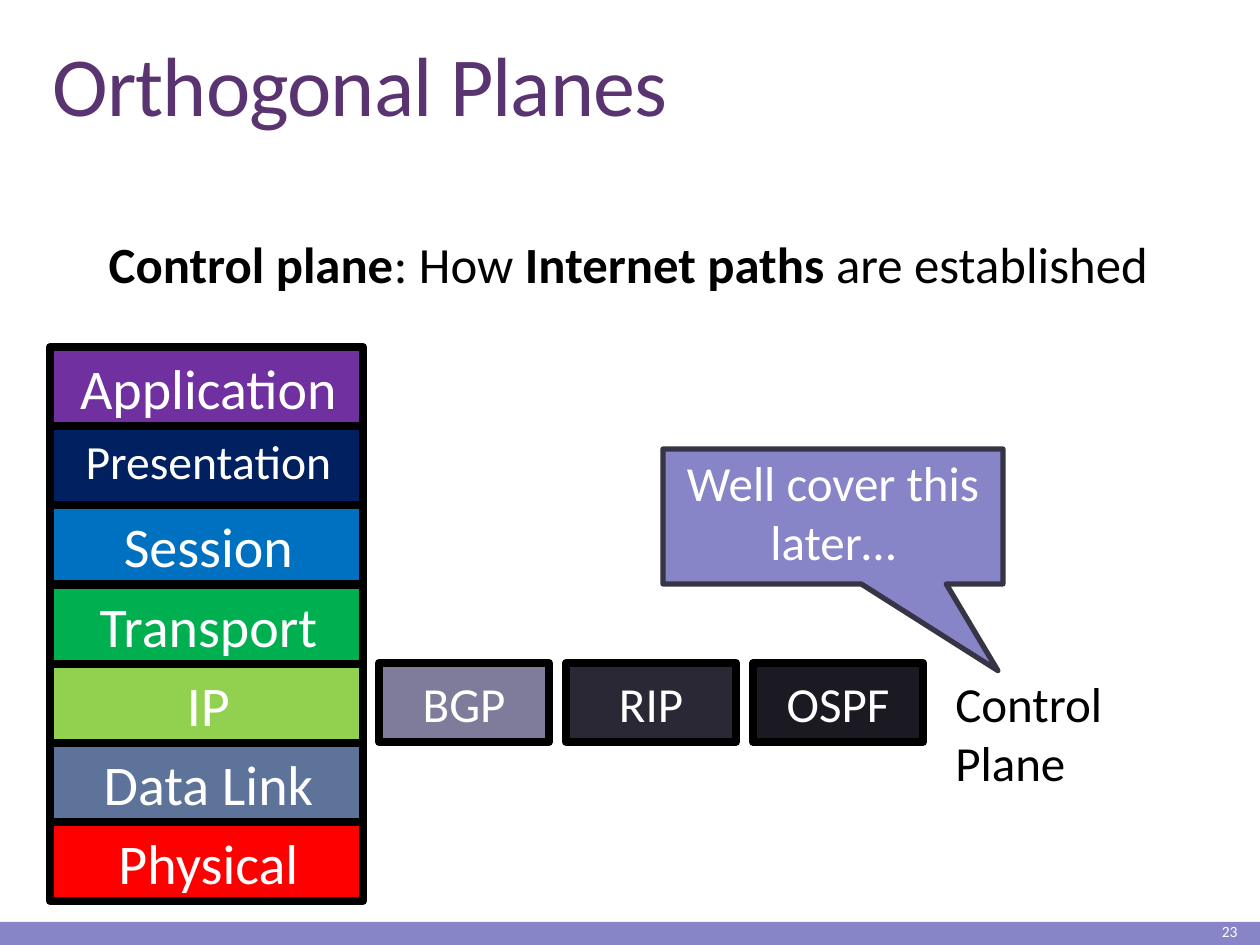
"""Build the slide on the orthogonal layer and control planes."""
import pptx
import pptx.dml.color
import pptx.enum.shapes
import pptx.enum.text
import pptx.util

SHAPE = pptx.enum.shapes.MSO_SHAPE
ALIGN = pptx.enum.text.PP_ALIGN
ANCHOR = pptx.enum.text.MSO_ANCHOR
WHITE, BLACK, LILAC = "FFFFFF", "000000", "8784C7"


def px(*sizes):
    return [round(size * 914400 / 126) for size in sizes]


def color(code):
    return pptx.dml.color.RGBColor.from_string(code)


class Deck:
    font = "Calibri"

    def __init__(self):
        self.prs = pptx.Presentation()
        self.prs.slide_width, self.prs.slide_height = px(1260, 945)
        self.slide = self.prs.slides.add_slide(self.prs.slide_layouts[5])

    def label(self, shape, runs, size, ink=WHITE, align=ALIGN.CENTER,
              anchor=ANCHOR.TOP, before=0):
        frame = shape.text_frame
        frame.word_wrap = True
        frame.auto_size = pptx.enum.text.MSO_AUTO_SIZE.NONE
        frame.vertical_anchor = anchor
        para = frame.paragraphs[0]
        para.alignment = align
        para.space_before = pptx.util.Pt(before)
        para.font.name = self.font
        para.font.size = pptx.util.Pt(size)
        para.font.color.rgb = color(ink)
        for words, bold in runs:
            run = para.add_run()
            run.text = words
            if bold:
                run.font.bold = True
        return para

    def title(self, words, box):
        shape = self.slide.shapes.title
        shape.left, shape.top, shape.width, shape.height = px(*box)
        para = self.label(shape, [(words, False)], 48, "5A3471",
                          ALIGN.LEFT, ANCHOR.BOTTOM)
        para.line_spacing = 0.85
        para.runs[0]._r.get_or_add_rPr().set("spc", "-50")

    def text(self, runs, box, size, **style):
        if isinstance(runs, str):
            runs = [(runs, False)]
        shape = self.slide.shapes.add_textbox(*px(*box))
        return self.label(shape, runs, size, **style)

    def shape(self, box, fill, line=None, width=4.5, kind=SHAPE.RECTANGLE):
        shape = self.slide.shapes.add_shape(kind, *px(*box))
        shape.shadow.inherit = False
        shape.fill.solid()
        shape.fill.fore_color.rgb = color(fill)
        if line:
            shape.line.color.rgb = color(line)
            shape.line.width = pptx.util.Pt(width)
        else:
            shape.line.fill.background()
        return shape

    def layer(self, name, top, fill, size):
        self.shape((50, top, 313, 79), fill, BLACK)
        para = self.text(name, (47, top, 308, 79), size, before=6)
        props = para._p.get_or_add_pPr()
        props.set("marL", str(px(15)[0]))
        props.set("indent", "0")

    def plane(self, name, left, fill):
        shape = self.shape((left, 663, 170, 79), fill, BLACK)
        self.label(shape, [(name, False)], 28, anchor=ANCHOR.MIDDLE)

    def callout(self, words, box, tip):
        shape = self.shape(box, LILAC, "373545", 3,
                           SHAPE.RECTANGULAR_CALLOUT)
        shape.adjustments[0], shape.adjustments[1] = tip
        left, top, width, height = box
        self.text(words, (left, top - 3, width, height - 4), 28)


def main():
    deck = Deck()
    deck.shape((0, 922, 1260, 23), LILAC)
    deck.title("Orthogonal Planes", (40, 39, 1195, 101))
    deck.text("23", (1114, 917, 136, 28), 8.9,
              align=ALIGN.RIGHT, anchor=ANCHOR.MIDDLE)

    layers = [
        ("Application", "7030A0", 32), ("Presentation", "002060", 27.2),
        ("Session", "0070C0", 32), ("Transport", "00B050", 32),
        ("IP", "92D050", 32), ("Data Link", "5D739A", 32),
        ("Physical", "FF0000", 32),
    ]
    for row, (name, fill, size) in enumerate(layers):
        deck.layer(name, 347 + round(row * 79.2), fill, size)

    planes = [("BGP", "7F7B9A"), ("RIP", "292834"), ("OSPF", "1B1A22")]
    for col, (name, fill) in enumerate(planes):
        deck.plane(name, 379 + col * 187, fill)

    deck.text("Control Plane", (943, 667, 200, 130), 28,
              ink=BLACK, align=ALIGN.LEFT)
    deck.callout("Well cover this later…", (663, 449, 340, 135),
                 (0.485, 1.142))
    deck.text([("Control plane", True), (": How ", False),
               ("Internet paths", True), (" are established", False)],
              (86, 227, 1085, 74), 29, ink=BLACK, before=7)
    deck.prs.save("out.pptx")


if __name__ == "__main__":
    main()
